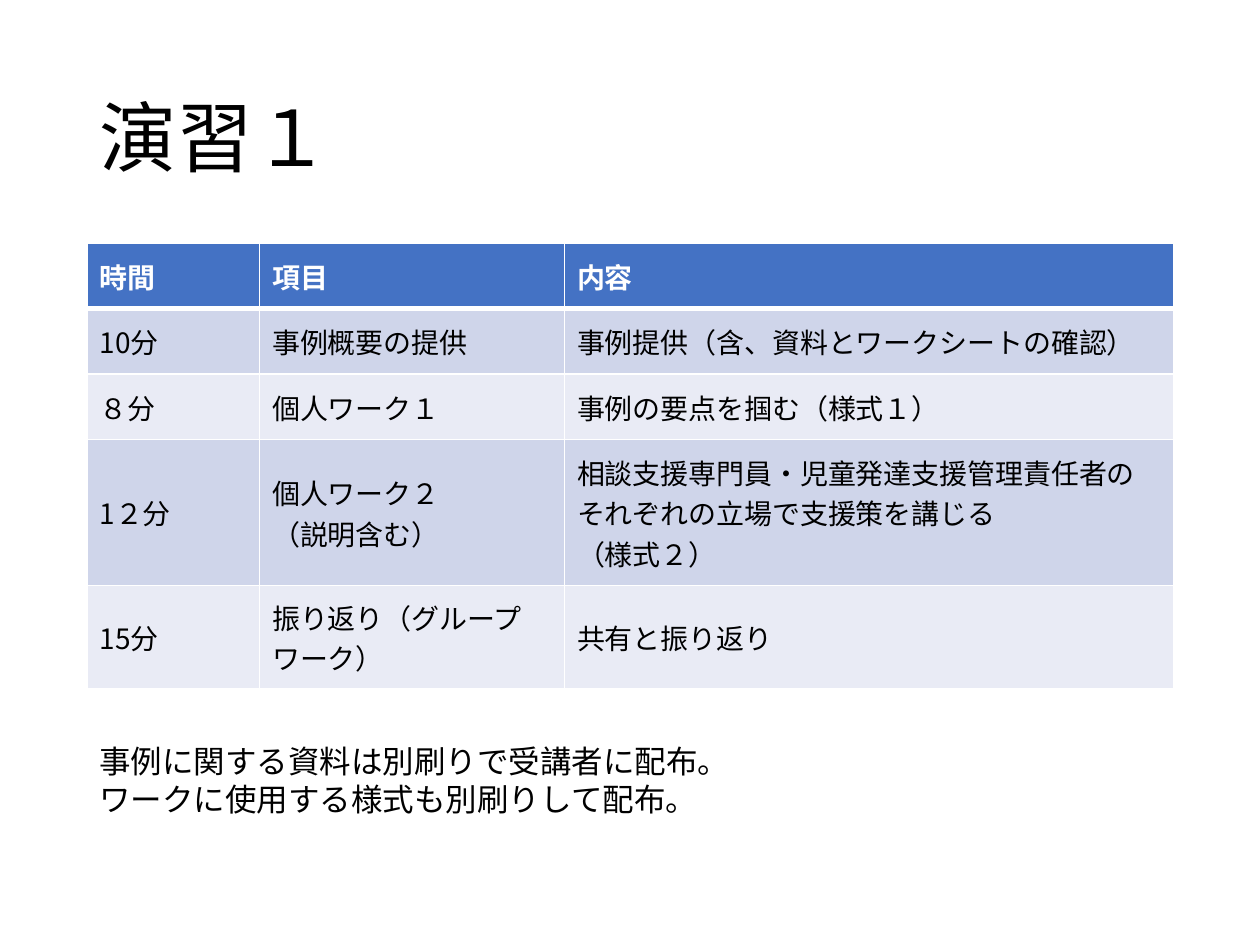
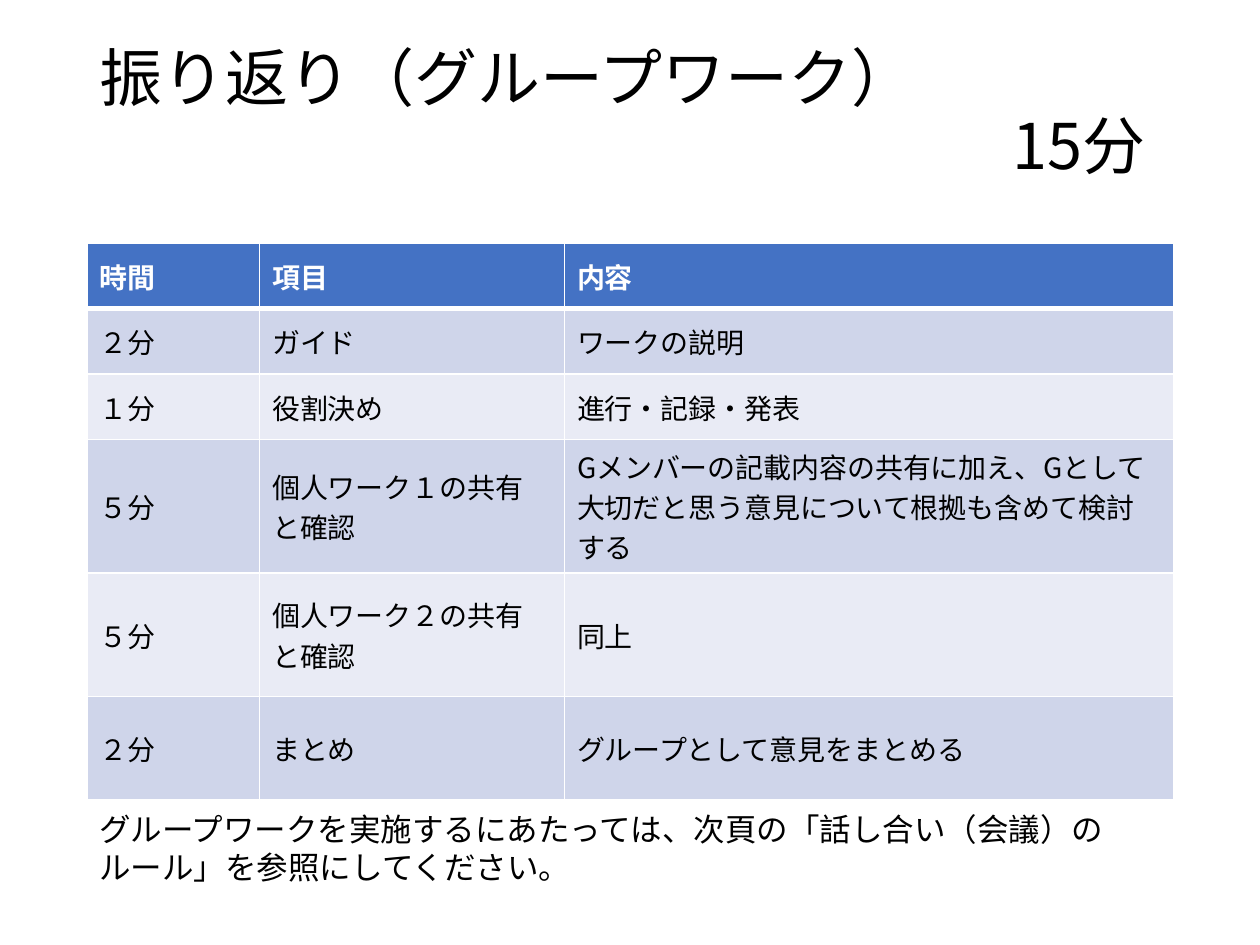
from lxml import etree
from pptx import Presentation
from pptx.dml.color import RGBColor
from pptx.enum import text
from pptx.oxml.ns import qn
from pptx.util import Inches, Pt

# Content
HEADINGS = ("時間", "項目", "内容")
SLIDES = [
    {
        "title": [("演習１", "left")],
        "title_size": 44,
        "title_top": 0.4,
        "rows": [
            (0.52, "10分", "事例概要の提供", "事例提供（含、資料とワークシートの確認）"),
            (0.52, "８分", "個人ワーク１", "事例の要点を掴む（様式１）"),
            (1.16, "1２分", "個人ワーク２\n（説明含む）",
             "相談支援専門員・児童発達支援管理責任者のそれぞれの立場で支援策を講じる\n（様式２）"),
            (0.82, "15分", "振り返り（グループワーク）", "共有と振り返り"),
        ],
        "note": "事例に関する資料は別刷りで受講者に配布。\nワークに使用する様式も別刷りして配布。",
        "note_top": 5.84,
        "note_width": 8.62,
    },
    {
        "title": [("振り返り（グループワーク）", "left"), ("15分", "right")],
        "title_size": 36,
        "title_top": 0.19,
        "rows": [
            (0.52, "２分", "ガイド", "ワークの説明"),
            (0.52, "１分", "役割決め", "進行・記録・発表"),
            (1.06, "５分", "個人ワーク１の共有\nと確認",
             "Gメンバーの記載内容の共有に加え、Gとして大切だと思う意見について根拠も含めて検討する"),
            (0.98, "５分", "個人ワーク２の共有\nと確認", "同上"),
            (0.82, "２分", "まとめ", "グループとして意見をまとめる"),
        ],
        "note": "グループワークを実施するにあたっては、次頁の「話し合い（会議）のルール」を参照にしてください。",
        "note_top": 6.38,
        "note_width": 8.51,
    },
]

# Shared look
JAPANESE_FONT, NOTE_FONT = "Noto Sans CJK JP", "Calibri"
BLACK, WHITE, HEADER_FILL = "000000", "FFFFFF", "4472C4"
BAND_FILLS = ("CFD5EA", "E9EBF5")
LEFT, WIDTH, TITLE_HEIGHT = 0.69, 8.62, 1.45
TABLE_TOP, HEADER_HEIGHT = 1.93, 0.52
COLUMN_WIDTHS = (1.37, 2.42, 4.84)
THIN_BORDER, HEADER_BORDER = 1, 3
NOTE_HEIGHT, TITLE_RIGHT_INSET, TITLE_SPACING = 0.71, 0.22, 0.9
ALIGNMENTS = {"left": text.PP_ALIGN.LEFT, "right": text.PP_ALIGN.RIGHT}


def color(hex_string):
    return RGBColor.from_string(hex_string)


def write(frame, lines, size=16, font=JAPANESE_FONT, fill=BLACK, bold=False,
          line_spacing=1.0):
    """Write (text, alignment) pairs, one paragraph each."""
    for index, (line, alignment) in enumerate(lines):
        paragraph = frame.add_paragraph() if index else frame.paragraphs[0]
        paragraph.alignment = ALIGNMENTS[alignment]
        paragraph.line_spacing = line_spacing
        run = paragraph.add_run()
        run.text = line
        run.font.size = Pt(size)
        run.font.bold = bold
        run.font.color.rgb = color(fill)
        run.font.name = font
        etree.SubElement(run.font._element, qn("a:ea"), typeface=font)


def left_lines(content):
    return [(line, "left") for line in content.split("\n")]


def add_text(slide, lines, top, width, height,
             anchor=text.MSO_ANCHOR.TOP, right_inset=0.1, **text_format):
    shape = slide.shapes.add_textbox(
        Inches(LEFT), Inches(top), Inches(width), Inches(height))
    frame = shape.text_frame
    frame.word_wrap = True
    frame.vertical_anchor = anchor
    frame.margin_right = Inches(right_inset)
    write(frame, lines, **text_format)


def set_borders(cell, top, bottom):
    """Add white cell borders; call before the cell is filled."""
    properties = cell._tc.get_or_add_tcPr()
    widths = {"L": THIN_BORDER, "R": THIN_BORDER, "T": top, "B": bottom}
    for side, width in widths.items():
        line = etree.SubElement(properties, qn(f"a:ln{side}"), w=str(Pt(width)))
        line_fill = etree.SubElement(line, qn("a:solidFill"))
        etree.SubElement(line_fill, qn("a:srgbClr"), val=WHITE)


def add_schedule(slide, body):
    rows = [(HEADER_HEIGHT, *HEADINGS), *body]
    table = slide.shapes.add_table(
        len(rows), len(HEADINGS), Inches(LEFT), Inches(TABLE_TOP),
        Inches(WIDTH), Inches(sum(row[0] for row in rows))).table
    for column, width in zip(table.columns, COLUMN_WIDTHS):
        column.width = Inches(width)
    for row_index, (height, *contents) in enumerate(rows):
        header = row_index == 0
        table.rows[row_index].height = Inches(height)
        for column_index, content in enumerate(contents):
            cell = table.cell(row_index, column_index)
            cell.vertical_anchor = text.MSO_ANCHOR.MIDDLE
            set_borders(cell,
                        top=HEADER_BORDER if row_index == 1 else THIN_BORDER,
                        bottom=HEADER_BORDER if header else THIN_BORDER)
            cell.fill.solid()
            cell.fill.fore_color.rgb = color(
                HEADER_FILL if header else BAND_FILLS[(row_index - 1) % 2])
            write(cell.text_frame, left_lines(content), bold=header,
                  fill=WHITE if header else BLACK)


def main():
    presentation = Presentation()
    presentation.slide_width, presentation.slide_height = Inches(10), Inches(7.5)
    for content in SLIDES:
        slide = presentation.slides.add_slide(presentation.slide_layouts[6])
        # Title
        add_text(slide, content["title"], content["title_top"], WIDTH, TITLE_HEIGHT,
                 anchor=text.MSO_ANCHOR.MIDDLE, right_inset=TITLE_RIGHT_INSET,
                 size=content["title_size"], line_spacing=TITLE_SPACING)
        # Schedule
        add_schedule(slide, content["rows"])
        # Note under the table
        add_text(slide, left_lines(content["note"]), content["note_top"],
                 content["note_width"], NOTE_HEIGHT, size=18, font=NOTE_FONT)
    presentation.save("out.pptx")


if __name__ == "__main__":
    main()
